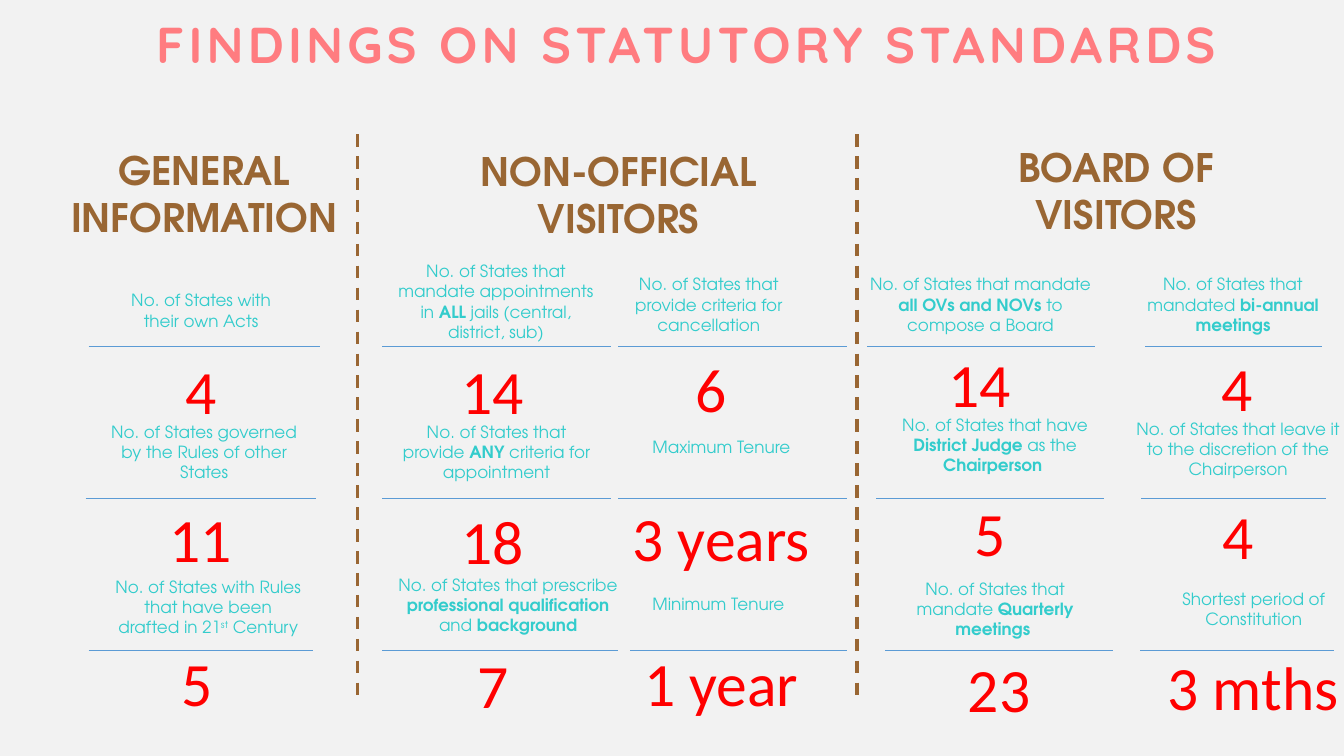
from dataclasses import dataclass

from lxml import etree
from pptx import Presentation
from pptx.dml.color import RGBColor
from pptx.enum.dml import MSO_LINE
from pptx.enum.shapes import MSO_CONNECTOR
from pptx.enum.text import MSO_AUTO_SIZE, PP_ALIGN
from pptx.oxml.ns import qn
from pptx.util import Inches, Pt

CENTER, LEFT = PP_ALIGN.CENTER, PP_ALIGN.LEFT
FIT = MSO_AUTO_SIZE.SHAPE_TO_FIT_TEXT
STRAIGHT, DASH = MSO_CONNECTOR.STRAIGHT, MSO_LINE.DASH

BACKGROUND = RGBColor(0xF2, 0xF2, 0xF2)
PINK = RGBColor(0xFF, 0x7C, 0x80)
BROWN = RGBColor(0x99, 0x66, 0x33)
TEAL = RGBColor(0x33, 0xCC, 0xCC)
RED = RGBColor(0xFF, 0x00, 0x00)
BLUE = RGBColor(0x5B, 0x9B, 0xD5)
DISPLAY, BODY, NUMBER = "Quicksand", "TeX Gyre Adventor", "Calibri"

FIRST_RULE, ROW_STEP = 3.44, 1.505
DIVIDER_TOP, DIVIDER_BOTTOM = 1.33, 6.97


@dataclass
class Finding:
    caption: str
    lines: int
    caption_at: tuple
    value: str
    value_at: tuple
    rule: tuple
    align: int = CENTER


GENERAL = [
    Finding("No. of States with their own Acts", 2, (0.25, -0.61, 1.79),
            "4", (0.44, 0.01, 1.4), (0.03, 2.29)),
    Finding("No. of States governed by the Rules of other States", 3, (0.13, -0.81, 2.09),
            "11", (0.73, -0.02, 0.98), (0, 2.28), LEFT),
    Finding("No. of States with Rules that have been drafted in 21^st^ Century", 3,
            (0.17, -0.78, 2.09), "5", (0.85, -0.1, 0.98), (0.03, 2.22), LEFT),
]
APPOINTMENT = [
    Finding("No. of States that mandate appointments in *ALL* jails (central, district, sub)", 4,
            (-0.01, -0.9, 2.28), "14", (0.4, 0.01, 1.4), (0, 2.27)),
    Finding("No. of States that provide *ANY* criteria for appointment", 3,
            (0.09, -0.81, 2.09), "18", (0.4, 0, 1.4), (0, 2.27)),
    Finding("No. of States that prescribe *professional qualification *and *background*", 3,
            (0, -0.8, 2.5), "7", (0.4, -0.08, 1.4), (0, 2.34)),
]
TENURE = [
    Finding("No. of States that provide criteria for cancellation", 3, (-0.16, -0.77, 2.12),
            "6", (0.22, -0.01, 1.4), (0, 2.27)),
    Finding("Maximum Tenure", 1, (-0.02, -0.66, 2.09),
            "3 years", (-0.05, -0.03, 2.15), (0, 2.27)),
    Finding("Minimum Tenure", 1, (-0.05, -0.61, 2.09),
            "1 year", (0.07, -0.1, 1.91), (0.12, 2.15)),
]
COMPOSITION = [
    Finding("No. of States that mandate *all OVs and NOVs *to compose a Board", 3,
            (-0.1, -0.77, 2.45), "14", (0.42, -0.06, 1.4), (0, 2.26)),
    Finding("No. of States that have *District Judge *as the *Chairperson *", 3,
            (0.18, -0.88, 2.18), "5", (0.52, -0.08, 1.4), (0.09, 2.26)),
    Finding("No. of States that mandate *Quarterly meetings *", 3,
            (0.18, -0.76, 2.18), "23", (0.61, -0.04, 1.4), (0.18, 2.26)),
]
MEETINGS = [
    Finding("No. of States that mandated *bi-annual meetings*", 3, (-0.03, -0.77, 1.9),
            "4", (0.26, -0.02, 1.4), (0.05, 1.75)),
    Finding("No. of States that leave it to the discretion of the Chairperson", 3,
            (-0.14, -0.84, 2.22), "4", (0.27, -0.05, 1.4), (0.01, 1.83)),
    Finding("Shortest period of Constitution", 2, (0.23, -0.66, 1.79),
            "3 mths", (-0.21, -0.06, 2.66), (0, 1.92)),
]
SECTIONS = [
    ("GENERAL INFORMATION", (0.48, 1.4, 3.09), [(0.85, GENERAL)]),
    ("NON-OFFICIAL VISITORS", (4.59, 1.41, 3.09), [(3.79, APPOINTMENT), (6.13, TENURE)]),
    ("BOARD OF VISITORS", (9.7, 1.37, 2.74), [(8.6, COMPOSITION), (11.31, MEETINGS)]),
]


def add_text(s, text, x, y, w, h, size, font, color, bold=False, align=CENTER, spacing=0):
    sp = s.shapes.add_textbox(Inches(x), Inches(y), Inches(w), Inches(h))
    tf = sp.text_frame
    tf.word_wrap = True
    tf.auto_size = FIT
    p = tf.paragraphs[0]
    p.alignment = align
    for i, weighted in enumerate(text.split("*")):
        for j, part in enumerate(weighted.split("^")):
            if not part:
                continue
            r = p.add_run()
            r.text = part
            r.font.size = Pt(size)
            r.font.name = font
            r.font.bold = bold or i % 2 == 1
            r.font.color.rgb = color
            props = r._r.get_or_add_rPr()
            if j % 2:
                props.set("baseline", "30000")
            if spacing:
                props.set("spc", str(spacing * 100))


def add_line(s, x1, y1, x2, y2, color, width, dash=None):
    line = s.shapes.add_connector(STRAIGHT, Inches(x1), Inches(y1), Inches(x2), Inches(y2))
    line.line.color.rgb = color
    line.line.width = Pt(width)
    if dash:
        line.line.dash_style = dash
    etree.SubElement(line._element.spPr, qn("a:effectLst"))


def add_finding(s, finding, x, y):
    dx, dy, w = finding.caption_at
    add_text(s, finding.caption, x + dx, y + dy, w, 0.1 + 0.2 * finding.lines,
             size=12, font=BODY, color=TEAL)
    dx, dy, w = finding.value_at
    add_text(s, finding.value, x + dx, y + dy, w, 0.84,
             size=44, font=NUMBER, color=RED, align=finding.align)
    dx, w = finding.rule
    add_line(s, x + dx, y, x + dx + w, y, BLUE, 0.5)


def add_section(s, heading, box, columns):
    add_text(s, heading, *box, 1.04, size=28, font=BODY, color=BROWN, bold=True)
    for x, findings in columns:
        for row, finding in enumerate(findings):
            add_finding(s, finding, x, FIRST_RULE + row * ROW_STEP)


def main():
    prs = Presentation()
    prs.slide_width, prs.slide_height = Inches(13.33), Inches(7.5)
    s = prs.slides.add_slide(prs.slide_layouts[6])
    s.background.fill.solid()
    s.background.fill.fore_color.rgb = BACKGROUND
    add_text(s, "FINDINGS ON STATUTORY STANDARDS", 0.7, 0.08, 12.22, 0.71,
             size=36, font=DISPLAY, color=PINK, bold=True, spacing=3)
    for heading, box, columns in SECTIONS:
        add_section(s, heading, box, columns)
    for x in (3.55, 8.5):
        add_line(s, x, DIVIDER_TOP, x, DIVIDER_BOTTOM, BROWN, 2.25, DASH)
    prs.save("out.pptx")


if __name__ == "__main__":
    main()
